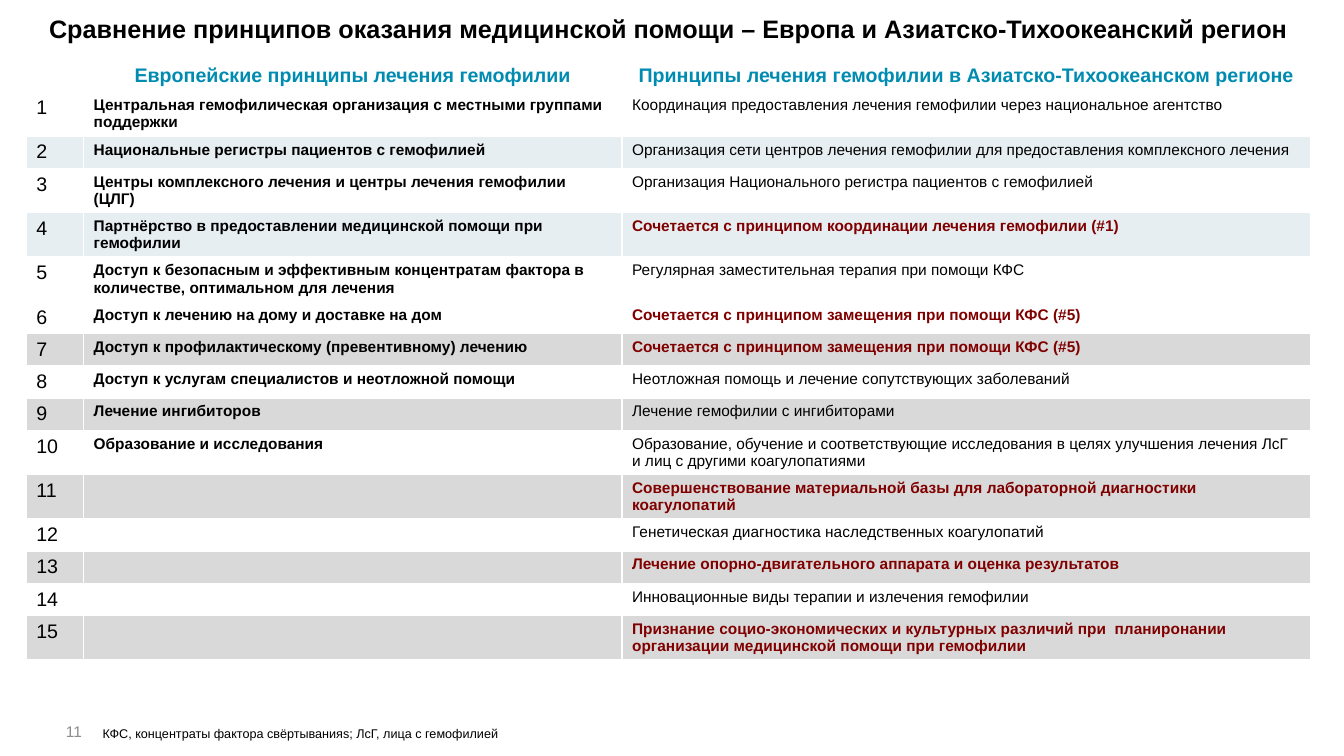
from dataclasses import dataclass

from lxml import etree
from pptx import Presentation
from pptx.dml.color import RGBColor
from pptx.enum.text import MSO_ANCHOR, PP_ALIGN
from pptx.oxml.ns import qn
from pptx.util import Inches, Pt

LEFT, CENTER, RIGHT, JUSTIFY = PP_ALIGN.LEFT, PP_ALIGN.CENTER, PP_ALIGN.RIGHT, PP_ALIGN.JUSTIFY
TOP, BOTTOM = MSO_ANCHOR.TOP, MSO_ANCHOR.BOTTOM


@dataclass(frozen=True)
class Theme:
    font: str = "Arial"
    black: str = "000000"
    white: str = "FFFFFF"
    teal: str = "008BB0"
    maroon: str = "800000"
    page_grey: str = "8C8C8C"
    pale_band: str = "E7EEF2"
    grey_band: str = "D9D9D9"
    title_size: int = 18
    heading_size: int = 14
    body_size: int = 11
    note_size: int = 9


theme = Theme()


def write(frame, text, size, color=theme.black, bold=False, align=LEFT):
    paragraph = frame.paragraphs[0]
    paragraph.alignment = align
    if not text:
        etree.SubElement(paragraph._p, qn("a:endParaRPr"), sz=str(size * 100))
        return
    run = paragraph.add_run()
    run.text = text
    run.font.name = theme.font
    run.font.size = Pt(size)
    run.font.bold = bold
    run.font.color.rgb = RGBColor.from_string(color)


def add_border(cell, side, width):
    line = etree.SubElement(cell._tc.get_or_add_tcPr(), qn(f"a:ln{side}"), w=str(Pt(width)))
    fill = etree.SubElement(line, qn("a:solidFill"))
    etree.SubElement(fill, qn("a:srgbClr"), val=theme.white)


HEADINGS = [
    "",
    "Eвропейские принципы лечения гемофилии",
    "Принципы лечения гемофилии в Азиатско-Тихоокеанском регионе",
]
PRINCIPLES = [
    ("Центральная гемофилическая организация с местными группами поддержки",
     "Координация предоставления лечения гемофилии через национальное агентство"),
    ("Национальные регистры пациентов с гемофилией",
     "Организация сети центров лечения гемофилии для предоставления комплексного лечения"),
    ("Центры комплексного лечения и центры лечения гемофилии (ЦЛГ)",
     "Организация Национального регистра пациентов с гемофилией"),
    ("Партнёрство в предоставлении медицинской помощи при гемофилии",
     "Сочетается с принципом координации лечения гемофилии (#1)"),
    ("Доступ к безопасным и эффективным концентратам фактора в количестве, оптимальном для лечения",
     "Регулярная заместительная терапия при помощи КФС"),
    ("Доступ к лечению на дому и доставке на дом",
     "Сочетается с принципом замещения при помощи КФС (#5)"),
    ("Доступ к профилактическому (превентивному) лечению",
     "Сочетается с принципом замещения при помощи КФС (#5)"),
    ("Доступ к услугам специалистов и неотложной помощи",
     "Неотложная помощь и лечение сопутствующих заболеваний"),
    ("Лечение ингибиторов",
     "Лечение гемофилии с ингибиторами"),
    ("Образование и исследования",
     "Образование, обучение и соответствующие исследования в целях улучшения лечения ЛсГ "
     "и лиц с другими коагулопатиями"),
    ("", "Совершенствование материальной базы для лабораторной диагностики коагулопатий"),
    ("", "Генетическая диагностика наследственных коагулопатий"),
    ("", "Лечение опорно-двигательного аппарата и оценка результатов"),
    ("", "Инновационные виды терапии и излечения гемофилии"),
    ("", "Признание социо-экономических и культурных различий при  планиронании "
         "организации медицинской помощи при гемофилии"),
]
HIGHLIGHTED = {4, 6, 7, 11, 13, 15}
JUSTIFIED = {12, 14}
TWO_LINE = {1, 3, 4, 5, 10, 11, 15}
BANDS = {2: theme.pale_band, 4: theme.pale_band}
BANDS.update({number: theme.grey_band for number in range(7, 16, 2)})

prs = Presentation()
prs.slide_width = Inches(13.33)
prs.slide_height = Inches(7.5)
slide = prs.slides.add_slide(prs.slide_layouts[6])

captions = [
    (0.92, 6.95, 10.85, BOTTOM, 0,
     "КФС, концентраты фактора свёртыванияs; ЛсГ, лица с гемофилией",
     theme.note_size, theme.black, False, LEFT),
    (0.26, 6.95, 0.65, BOTTOM, 0, "11", theme.body_size, theme.page_grey, False, RIGHT),
    (0.26, 0.08, 12.74, TOP, 0.05,
     "Сравнение принципов оказания медицинской помощи – Европа и Азиатско-Тихоокеанский регион",
     theme.title_size, theme.black, True, CENTER),
]
for left, top, width, anchor, bottom_margin, text, size, color, bold, align in captions:
    frame = slide.shapes.add_textbox(Inches(left), Inches(top), Inches(width), Inches(0.4)).text_frame
    frame.word_wrap = True
    frame.vertical_anchor = anchor
    frame.margin_bottom = Inches(bottom_margin)
    write(frame, text, size, color, bold, align)

comparison = slide.shapes.add_table(
    len(PRINCIPLES) + 1, 3, Inches(0.26), Inches(0.59), Inches(12.74), Inches(5.96)).table
comparison.horz_banding = False
for column, width in zip(comparison.columns, (0.57, 5.34, 6.83)):
    column.width = Inches(width)
for number, row in enumerate(comparison.rows):
    row.height = Inches(0.44 if number in TWO_LINE else 0.32)
    for cell in row.cells:
        cell.margin_bottom = Inches(0.02)
        for side in "LRTB":
            heading_edge = (number, side) in {(0, "B"), (1, "T")}
            add_border(cell, side, 3 if heading_edge else 1)
        cell.fill.solid()
        cell.fill.fore_color.rgb = RGBColor.from_string(BANDS.get(number, theme.white))

for cell, heading in zip(comparison.rows[0].cells, HEADINGS):
    cell.fill.background()
    write(cell.text_frame, heading, theme.heading_size, theme.teal, True, CENTER)

for number, (european, asian_pacific) in enumerate(PRINCIPLES, start=1):
    highlighted = number in HIGHLIGHTED
    write(comparison.cell(number, 0).text_frame, str(number), theme.heading_size)
    write(comparison.cell(number, 1).text_frame, european, theme.body_size, bold=True)
    write(comparison.cell(number, 2).text_frame, asian_pacific, theme.body_size,
          theme.maroon if highlighted else theme.black, highlighted,
          JUSTIFY if number in JUSTIFIED else LEFT)

prs.save("out.pptx")
